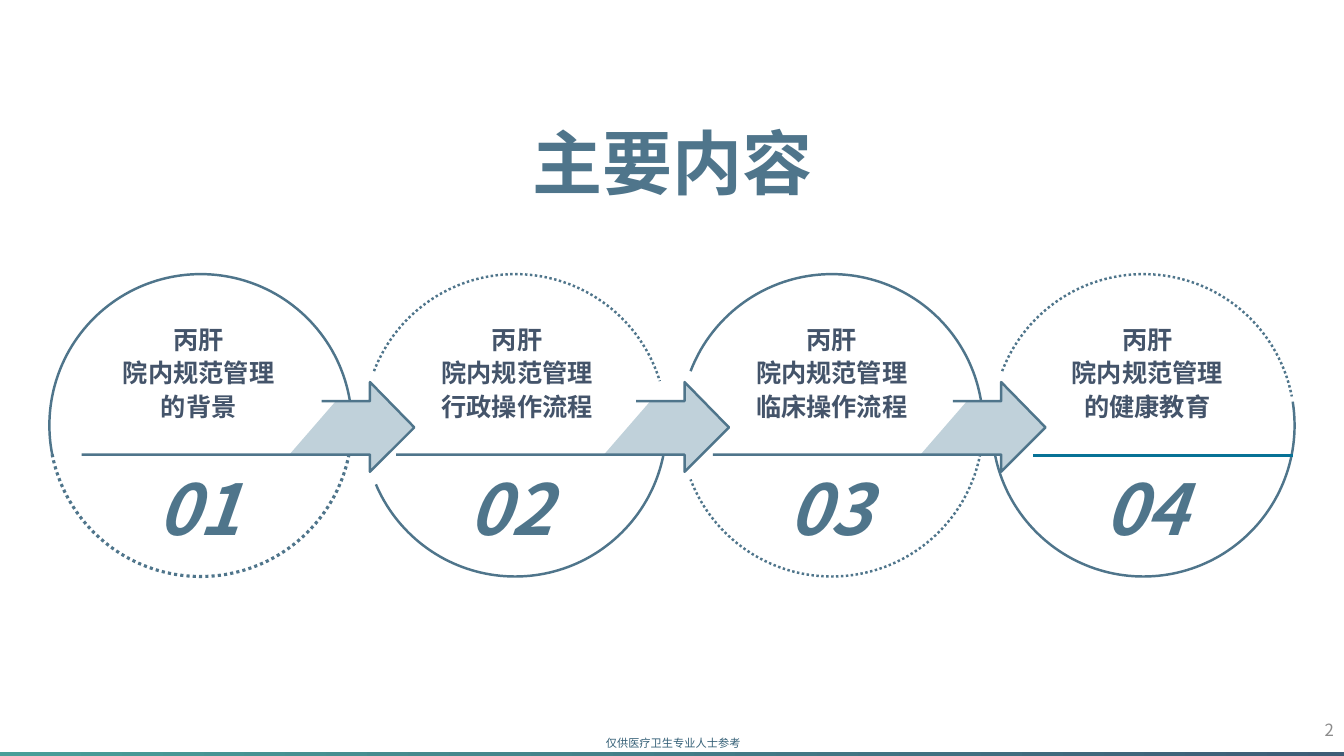
from lxml import etree
from pptx import Presentation
from pptx.dml.color import RGBColor
from pptx.enum import dml, shapes, text
from pptx.oxml import ns
from pptx.util import Inches, Pt

COLORS = {"blue": "4F758B", "pale": "C0D1DA", "label": "44546A", "rule": "077296",
          "footer": "356077", "page": "8C8C8C", "white": "FFFFFF",
          "bar_start": "489E98", "bar_end": "3E5C76"}
RGB = {name: RGBColor.from_string(value) for name, value in COLORS.items()}
CJK = "Noto Sans CJK SC"
ALIGN = text.PP_ALIGN

prs = Presentation()
prs.slide_width, prs.slide_height = Inches(13.33), Inches(7.5)
s = prs.slides.add_slide(prs.slide_layouts[6])


def write(sp, lines, size, color, align=ALIGN.CENTER, font=CJK, bold=True,
          italic=False, spacing=None, anchor=text.MSO_ANCHOR.TOP, wrap=True):
    tf = sp.text_frame
    tf.word_wrap, tf.vertical_anchor = wrap, anchor
    tf.text = "\n".join(lines)
    for p in tf.paragraphs:
        p.alignment, p.line_spacing = align, spacing
        f = p.font
        f.size, f.bold, f.italic, f.name = Pt(size), bold, italic, font
        f.color.rgb = RGB[color]
        props = p._p.pPr.find(ns.qn("a:defRPr"))
        etree.SubElement(props, ns.qn("a:ea")).set("typeface", font)


def style(sp, fill=None, width=1.75, dash=None):
    """Give a shape either a plain fill or a blue line."""
    sp.shadow.inherit = False
    if fill:
        sp.fill.solid()
        sp.fill.fore_color.rgb = RGB[fill]
        sp.line.fill.background()
    else:
        sp.fill.background()
        sp.line.color.rgb = RGB["blue"]
        sp.line.width = Pt(width)
        sp.line.dash_style = dash


# Footer bar and title
bar = s.shapes.add_shape(shapes.MSO_SHAPE.RECTANGLE, Inches(-0.01), Inches(7.46),
                         Inches(13.39), Inches(0.07))
bar.shadow.inherit = False
bar.line.fill.background()
bar.fill.gradient()
bar.fill.gradient_angle = 0
for stop, name in zip(bar.fill.gradient_stops, ("bar_start", "bar_end")):
    stop.color.rgb = RGB[name]

footer = s.shapes.add_textbox(Inches(5.91), Inches(7.26), Inches(1.55), Inches(0.24))
write(footer, ["仅供医疗卫生专业人士参考"], 8, "footer", ALIGN.LEFT, "Arial",
      bold=False, wrap=False)

title = s.shapes.add_shape(shapes.MSO_SHAPE.ROUNDED_RECTANGLE, Inches(3.98), Inches(1),
                           Inches(5.38), Inches(1.2))
title.adjustments[0] = 0.5
style(title, "white")
write(title, ["主要内容"], 50, "blue", anchor=text.MSO_ANCHOR.MIDDLE)

# Circles: arcs are (start degree, end degree, line width, dash), clockwise from the right
DOT = dml.MSO_LINE.ROUND_DOT
CENTER_Y, RADIUS = 4.22, 1.5
DEGREE = 0.6  # one degree in adjustment units
steps = [
    (1.99, 1.97, 1.97, "的背景", [(11, 169, 2.25, DOT), (169, 351, 1.75, None)]),
    (5.11, 5.06, 5.13, "行政操作流程", [(11, 157, 1.75, None), (201, 343, 1.75, DOT)]),
    (8.25, 8.23, 8.25, "临床操作流程", [(11, 159, 1.75, DOT), (201, 351, 1.75, None)]),
    (11.34, 11.36, 11.38, "的健康教育", [(351, 171, 1.75, None), (201, 349, 1.75, DOT)]),
]
for cx, _, _, _, arcs in steps:
    for start, end, width, dash in arcs:
        arc = s.shapes.add_shape(shapes.MSO_SHAPE.ARC, Inches(cx - RADIUS),
                                 Inches(CENTER_Y - RADIUS),
                                 Inches(2 * RADIUS), Inches(2 * RADIUS))
        arc.adjustments[0] = start * DEGREE
        arc.adjustments[1] = end * DEGREE
        style(arc, width=width, dash=dash)

# Arrows leading from each circle to the next: pale body, then blue outline
for cx, *_ in steps[:-1]:
    x = cx - 1.18
    head = [(x + 2.86, 4.51), (x + 2.86, 4.68), (x + 3.3, 4.24),
            (x + 2.86, 3.79), (x + 2.86, 3.98)]
    for left, top_left, fill in ((2.06, 2.52, "pale"), (0, 2.38, None)):
        points = [(x + left, 4.51), *head, (x + top_left, 3.98)]
        first, *rest = [(Inches(px), Inches(py)) for px, py in points]
        builder = s.shapes.build_freeform(*first)
        builder.add_line_segments(rest, close=fill is not None)
        style(builder.convert_to_shape(), fill)

rule = s.shapes.add_connector(shapes.MSO_CONNECTOR.STRAIGHT, Inches(10.25), Inches(4.52),
                              Inches(12.82), Inches(4.52))
rule.line.color.rgb = RGB["rule"]
rule.line.width = Pt(1.75)
etree.SubElement(rule._element.spPr, ns.qn("a:effectLst"))

# Numbers and labels
for i, (_, number_x, label_x, ending, _) in enumerate(steps, 1):
    number = s.shapes.add_textbox(Inches(number_x - 0.75), Inches(4.57),
                                  Inches(1.5), Inches(0.94))
    write(number, [f"{i:02}"], 50, "blue", italic=True)
    label = s.shapes.add_textbox(Inches(label_x - 1.12), Inches(3.14),
                                 Inches(2.24), Inches(1.1))
    write(label, ["丙肝", "院内规范管理", ending], 18, "label", spacing=1.1)

page = s.shapes.add_textbox(Inches(10.33), Inches(7.04), Inches(3), Inches(0.4))
write(page, ["2"], 12, "page", ALIGN.RIGHT, bold=False, anchor=text.MSO_ANCHOR.MIDDLE)

prs.save("out.pptx")
